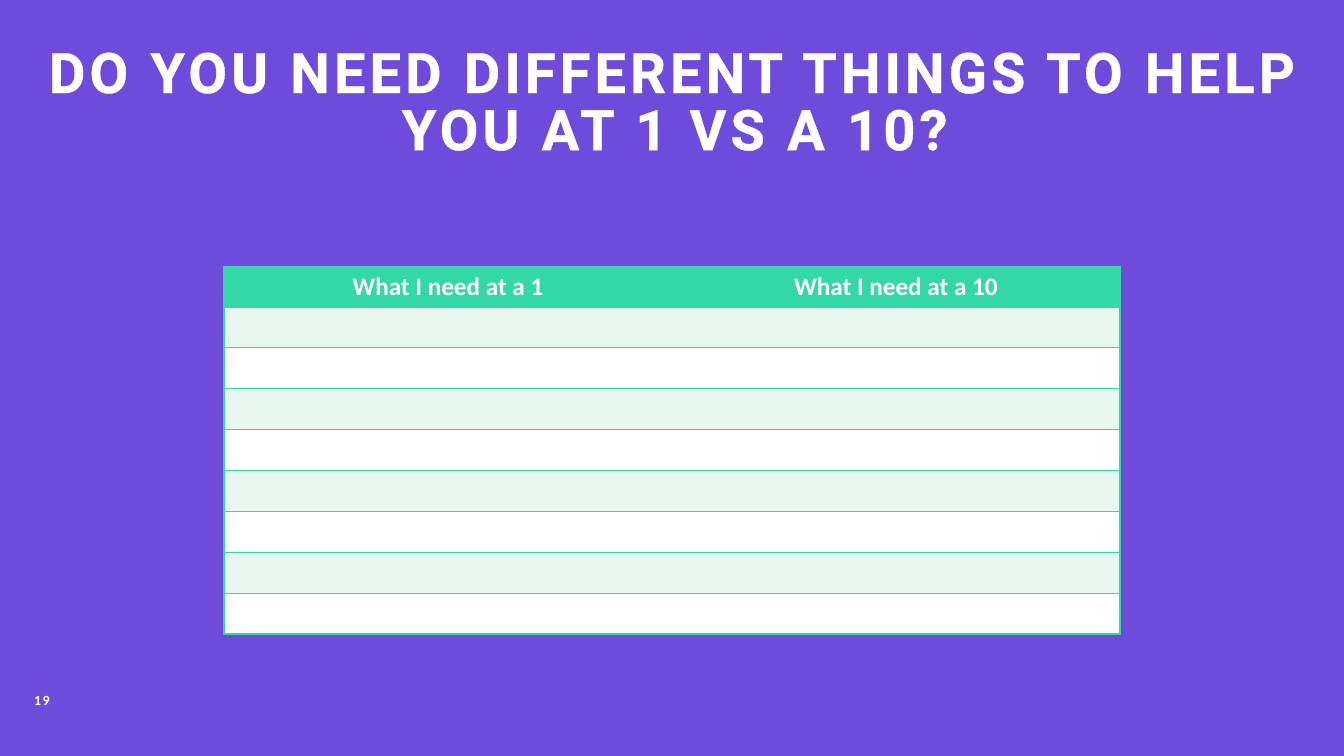
from lxml.etree import SubElement
from pptx import Presentation
from pptx.dml.color import RGBColor
from pptx.enum.text import MSO_ANCHOR as ANCHOR, PP_ALIGN as ALIGN
from pptx.oxml import parse_xml
from pptx.oxml.ns import nsdecls, qn
from pptx.util import Inches, Pt

W, H = 13.33, 7.5
PURPLE, GREEN, MINT, WHITE = "6F4BDC", "34D8A7", "E8F8F1", "FFFFFF"
HEADERS = ["What I need at a 1", "What I need at a 10"]
BLANK_ROWS = 8
ROW_H = 3.65 / (BLANK_ROWS + 1)


def rgb(color):
    return RGBColor.from_string(color)


def line_xml(tag, color, width):
    return parse_xml(f'<a:{tag} {nsdecls("a")} w="{Pt(width)}"><a:solidFill>'
                     f'<a:srgbClr val="{color}"/></a:solidFill></a:{tag}>')


def write(tf, text, size, font, spacing=0):
    """Fill a text frame with one centred white bold paragraph."""
    tf.text = text
    p = tf.paragraphs[0]
    p.alignment = ALIGN.CENTER
    for r in p.runs:
        r.font.size, r.font.name, r.font.bold = Pt(size), font, True
        r.font.color.rgb = rgb(WHITE)
        if spacing:
            r._r.get_or_add_rPr().set("spc", str(spacing * 100))
    return p


def place(shape, left, top, width, height):
    shape.left, shape.top = Inches(left), Inches(top)
    shape.width, shape.height = Inches(width), Inches(height)


def add_title(s, text):
    title = s.shapes.title
    place(title, 0.39, 0.42, 12.61, 1.55)
    tf = title.text_frame
    tf.word_wrap, tf.vertical_anchor = True, ANCHOR.TOP
    tf.margin_left = tf.margin_right = 0
    p = write(tf, text, 40, "Roboto", 3)
    p.line_spacing, p.space_after = 0.85, Pt(12)
    for r in p.runs:
        r._r.get_or_add_rPr().insert(0, line_xml("ln", WHITE, 0.75))


def add_page_number(s, number):
    box = s.shapes.add_textbox(0, Inches(6.29), Inches(0.83), Inches(0.79))
    tf = box.text_frame
    tf.word_wrap, tf.vertical_anchor = True, ANCHOR.BOTTOM
    write(tf, number, 10, "Calibri", 1)


def style_cell(cell, fill, sides):
    cell.fill.solid()
    cell.fill.fore_color.rgb = rgb(fill)
    tc_pr = cell._tc.get_or_add_tcPr()
    for i, side in enumerate("LRTB"):
        if side in sides:
            border = line_xml(f"ln{side}", GREEN, 1)
        else:
            border = parse_xml(f'<a:ln{side} {nsdecls("a")}/>')
            SubElement(border, qn("a:noFill"))
        tc_pr.insert(i, border)


def add_needs_table(s):
    cols, rows = len(HEADERS), BLANK_ROWS + 1
    table = s.shapes.add_table(rows, cols, Inches(W / 6), Inches(2.64),
                               Inches(W * 2 / 3), Inches(ROW_H * rows)).table
    for y in range(rows):
        for x in range(cols):
            cell = table.cell(y, x)
            fill = GREEN if y == 0 else MINT if y % 2 else WHITE
            style_cell(cell, fill, "TB" + ("L" if x == 0 else "R"))
            if y == 0:
                write(cell.text_frame, HEADERS[x], 18, "Calibri")


def main():
    prs = Presentation()
    prs.slide_width, prs.slide_height = Inches(W), Inches(H)
    s = prs.slides.add_slide(prs.slide_layouts[5])
    s.background.fill.solid()
    s.background.fill.fore_color.rgb = rgb(PURPLE)

    add_title(s, "DO YOU NEED DIFFERENT THINGS TO HELP YOU AT 1 VS A 10?")
    add_page_number(s, "19")
    add_needs_table(s)
    prs.save("out.pptx")


if __name__ == "__main__":
    main()
